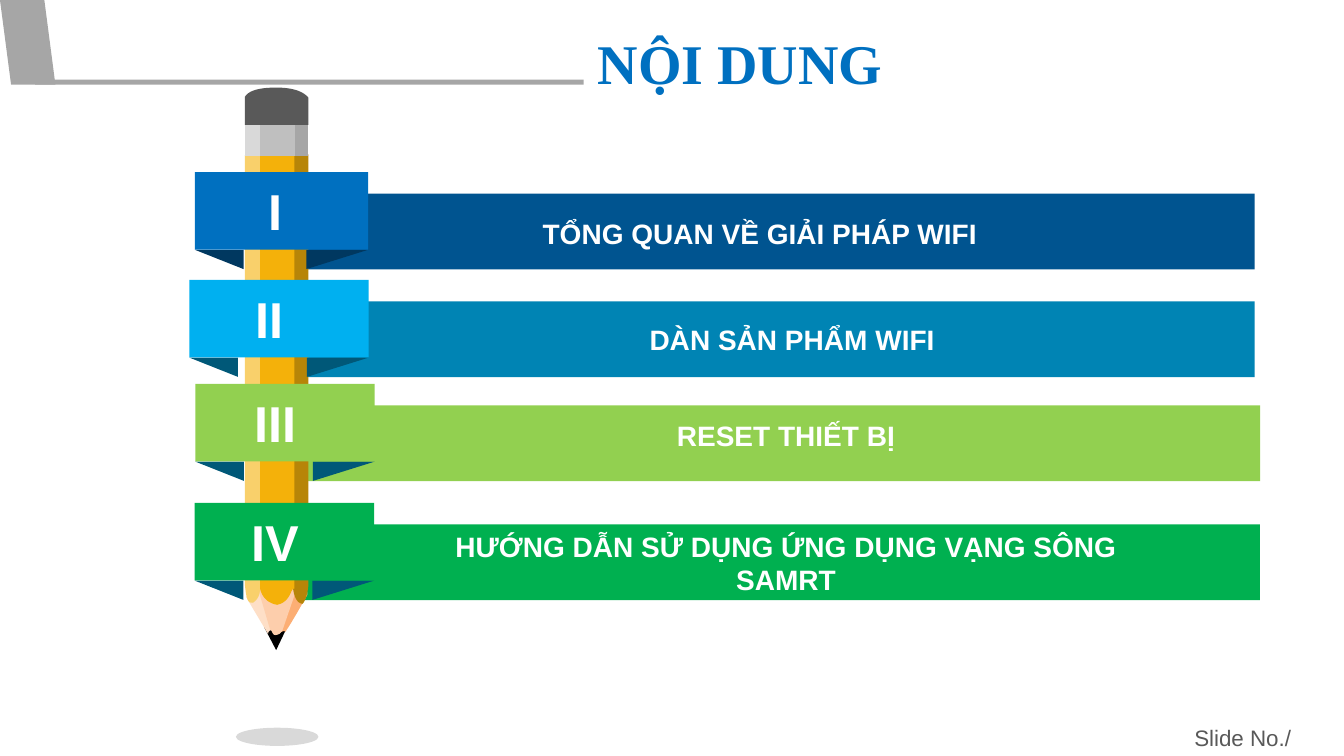
from dataclasses import dataclass

from lxml import etree
from pptx import Presentation
from pptx.dml.color import RGBColor
from pptx.enum.shapes import MSO_SHAPE as Preset
from pptx.enum.text import PP_ALIGN as Align
from pptx.oxml.ns import qn
from pptx.shapes.autoshape import Shape
from pptx.util import Pt

Point = tuple[float, float]
GRAY, WHITE = "A6A6A6", "FFFFFF"
TAB_HEIGHT, BAR_HEIGHT, BAR_DROP = 55.4, 54.2, 15.3
FOLD_HEIGHT, LEFT_FOLD, RIGHT_FOLD = 13.8, 34.8, 44.2
CURVE_STEPS = 12


@dataclass
class Section:
    numeral: str
    caption: str
    tab_left: float
    tab_top: float
    tab_width: float
    bar_left: float
    bar_right: float
    caption_left: float
    caption_top: float
    tab_color: str
    bar_color: str
    fold_color: str


@dataclass
class PencilPart:
    """Outline steps are points (2 numbers) or cubic curves (6 numbers)."""
    color: str
    outline: list[tuple[float, ...]]


SECTIONS = [
    Section("I", "TỔNG QUAN VỀ GIẢI PHÁP WIFI", 139.2, 123, 123.8, 219.6, 896.2,
            272.2, 151.2, "0070C0", "005490", "003860"),
    Section("II", "DÀN SẢN PHẨM WIFI", 135.2, 200, 128.2, 176.4, 896.2,
            295.3, 226.8, "00B0F0", "0084B4", "005878"),
    Section("III", "RESET THIẾT BỊ", 139.5, 274.3, 128.2, 180.7, 900.2,
            290.9, 295.2, "92D050", "92D050", "005878"),
    Section("IV", "HƯỚNG DẪN SỬ DỤNG ỨNG DỤNG VẠNG SÔNG SAMRT", 139.1, 359.3, 128.2, 180.7, 900,
            290.9, 374.4, "00B050", "00B050", "005878"),
]

PENCIL = [
    # Lead and sharpened wood
    PencilPart("000000", [(197.3, 464.4), (205.2, 447.8), (188.6, 447.8)]),
    PencilPart("FEDFC7", [
        (191.5, 452.9), (191.5, 451.4, 192.2, 450.7, 193.7, 450), (185, 419.8),
        (182.2, 422, 178.6, 424.1, 175.7, 426.2),
        (178.6, 431.3, 189.4, 449.3, 191.5, 452.9)]),
    PencilPart("FCAE74", [
        (203.8, 451.4), (209.5, 442.8, 214.6, 433.4, 219.6, 424.8),
        (220.3, 419.8, 212.4, 417.6, 209.5, 421.2),
        (206.6, 431.3, 197.3, 455, 200.9, 451.4),
        (201.6, 451.4, 203, 450, 203.8, 451.4)]),
    PencilPart("FDCEAC", [
        (196.6, 453.6), (198, 453.6, 200.2, 452.9, 200.9, 451.4), (201.6, 450.7),
        (211.7, 421.2), (208.8, 416.2, 191.5, 419.8, 187.2, 419.8), (184.3, 420.5),
        (193, 450), (194.4, 450, 194.4, 453.6, 196.6, 453.6)]),
    # Painted body
    PencilPart("F9D06B", [
        (175, 110.9), (186.5, 110.9), (185.8, 187.2), (185.8, 419),
        (185.8, 426.2, 183.6, 428.4, 180.7, 430.6),
        (180, 430.6, 178.6, 430.6, 177.8, 429.8),
        (176.4, 428.4, 175.7, 424.8, 175, 418.3)]),
    PencilPart("B78508", [
        (209.5, 110.2), (220.3, 110.2), (220.3, 418.3),
        (219.6, 425.5, 217.4, 430.6, 216, 431.3),
        (210.2, 430.6, 209.5, 420.5, 209.5, 421.2),
        (208.8, 419, 208.1, 162, 209.5, 110.2)]),
    PencilPart("F4B10A", [
        (185.8, 109.4), (210.2, 109.4), (210.2, 420.5),
        (207.4, 419.8, 208.1, 429.8, 198, 432),
        (189.4, 430.6, 186.5, 424.1, 185.8, 420.5)]),
    # Eraser and metal band
    PencilPart("595959", [
        (197.3, 62.6), (211, 62.6, 217.4, 66.2, 220.3, 69.8), (220.3, 89.3),
        (175, 89.3), (175, 69.1), (178.6, 63.4, 189.4, 62.6, 197.3, 62.6)]),
    PencilPart(GRAY, [(210.2, 89.3), (220.3, 89.3), (220.3, 111.6), (210.2, 111.6)]),
    PencilPart("D9D9D9", [(175, 89.3), (185.8, 89.3), (185.8, 111.6), (175, 111.6)]),
    PencilPart("BFBFBF", [(185.8, 89.3), (210.5, 89.3), (210.5, 111.6), (185.8, 111.6)]),
]

prs = Presentation()
prs.slide_width, prs.slide_height = Pt(960), Pt(540)
slide = prs.slides.add_slide(prs.slide_layouts[6])


def rgb(color: str) -> RGBColor:
    return RGBColor.from_string(color)


def paint(shape: Shape, color: str) -> Shape:
    shape.shadow.inherit = False
    shape.fill.solid()
    shape.fill.fore_color.rgb = rgb(color)
    shape.line.fill.background()
    return shape


def add_preset(preset: Preset, left: float, top: float, width: float, height: float,
               color: str) -> Shape:
    return paint(slide.shapes.add_shape(preset, Pt(left), Pt(top), Pt(width), Pt(height)), color)


def add_polygon(points: list[Point], color: str) -> Shape:
    corners = [(Pt(x), Pt(y)) for x, y in points]
    builder = slide.shapes.build_freeform(*corners[0])
    builder.add_line_segments(corners[1:], close=True)
    return paint(builder.convert_to_shape(), color)


def flatten(outline: list[tuple[float, ...]]) -> list[Point]:
    """Turn the curves of an outline into short straight steps."""
    points: list[Point] = []
    for step in outline:
        if len(step) == 2:
            points.append(step)
            continue
        (x0, y0), (x1, y1, x2, y2, x3, y3) = points[-1], step
        for i in range(1, CURVE_STEPS + 1):
            t = i / CURVE_STEPS
            a, b, c, d = (1 - t) ** 3, 3 * t * (1 - t) ** 2, 3 * t * t * (1 - t), t ** 3
            points.append((a * x0 + b * x1 + c * x2 + d * x3,
                           a * y0 + b * y1 + c * y2 + d * y3))
    return points


def add_text(text: str, left: float, top: float, width: float, height: float, size: float,
             color: str = WHITE, font: str = "Arial", bold: bool = True,
             align: Align = Align.CENTER, wrap: bool = True) -> None:
    frame = slide.shapes.add_textbox(Pt(left), Pt(top), Pt(width), Pt(height)).text_frame
    frame.word_wrap = wrap
    frame.text = text
    paragraph = frame.paragraphs[0]
    paragraph.alignment = align
    style = paragraph.runs[0].font
    style.name, style.size, style.bold = font, Pt(size), bold
    style.color.rgb = rgb(color)


def add_bar(section: Section) -> None:
    add_preset(Preset.RECTANGLE, section.bar_left, section.tab_top + BAR_DROP,
               section.bar_right - section.bar_left, BAR_HEIGHT, section.bar_color)


def add_tab(section: Section) -> None:
    """Draw the folded tab with its numeral, and the caption on the bar."""
    left, right = section.tab_left, section.tab_left + section.tab_width
    bottom = section.tab_top + TAB_HEIGHT
    for outer, inner in ((left, left + LEFT_FOLD), (right, right - RIGHT_FOLD)):
        add_polygon([(inner, bottom), (outer, bottom), (inner, bottom + FOLD_HEIGHT)],
                    section.fold_color)
    add_preset(Preset.RECTANGLE, left, section.tab_top, section.tab_width, TAB_HEIGHT,
               section.tab_color)
    add_text(section.numeral, left + 32.3, section.tab_top + 2, 50, 51, 36, wrap=False)
    add_text(section.caption, section.caption_left, section.caption_top, 541, 31.5, 20)


def main() -> None:
    add_text("Slide No./", 846, 513.4, 84.2, 26.6, 16, "595959", bold=False,
             align=Align.LEFT, wrap=False)
    corner = add_preset(Preset.FLOWCHART_DATA, 0, 0, 39.6, 60.5, GRAY)
    corner.element.spPr.find(qn("a:xfrm")).set("flipH", "1")
    add_preset(Preset.RECTANGLE, 25.2, 56.9, 391.7, 3.6, GRAY)
    add_text("NỘI DUNG", 151.2, 16.6, 754.6, 55.4, 40, "0070C0", "Times New Roman")

    for section in reversed(SECTIONS):
        add_bar(section)
    for part in PENCIL:
        add_polygon(flatten(part.outline), part.color)
    for section in SECTIONS:
        add_tab(section)

    ground_shade = add_preset(Preset.OVAL, 168.5, 519.8, 59, 13, "000000")
    shade_color = ground_shade.element.spPr.find(qn("a:solidFill"))[0]
    etree.SubElement(shade_color, qn("a:alpha")).set("val", "15000")
    prs.save("out.pptx")


if __name__ == "__main__":
    main()
